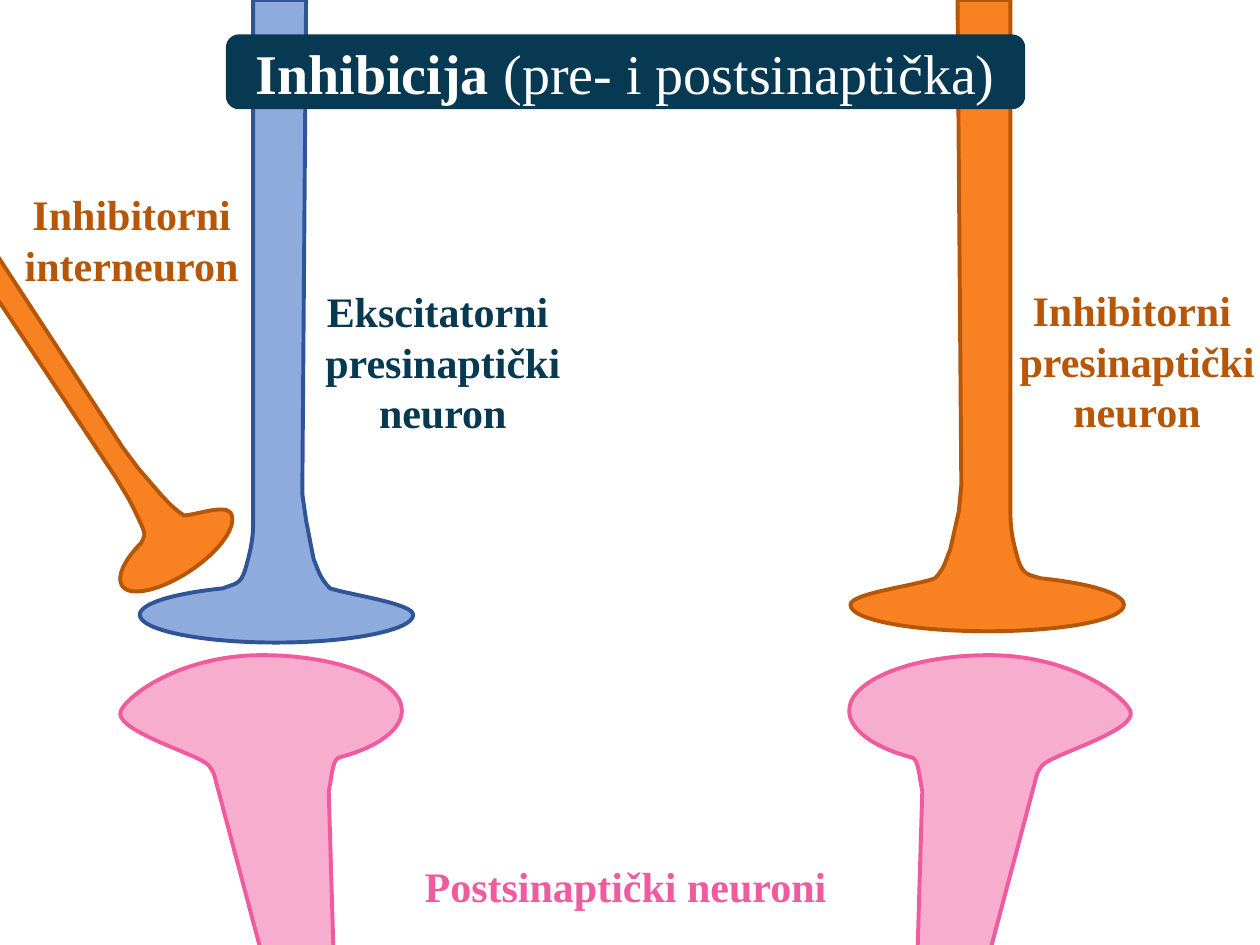
from lxml import etree
from pptx import Presentation
from pptx.dml.color import RGBColor
from pptx.enum.shapes import MSO_SHAPE
from pptx.enum.text import MSO_ANCHOR, MSO_AUTO_SIZE, PP_ALIGN
from pptx.oxml.ns import qn
from pptx.util import Inches, Pt

FONT = "Times New Roman"
COLORS = {
    "navy": "073952", "white": "FFFFFF",
    "pink": "F7ADCE", "pink_line": "EF5B9E",
    "orange": "F88222", "orange_line": "B65606",
    "blue": "8FAADC", "blue_line": "2F5597",
}

TITLE = [("Inhibicija ", True), ("(pre- i postsinaptička)", False)]
TITLE_BOX = (1.8, 0.28, 6.33, 0.58)

LABELS = [
    (["Inhibitorni ", "presinaptički", "neuron"], (7.91, 2.21, 2.23, 1.31), "orange_line"),
    (["Postsinaptički neuroni"], (3.11, 6.78, 3.71, 0.5), "pink_line"),
    (["Ekscitatorni ", "presinaptički", "neuron"], (2.4, 2.22, 2.23, 1.31), "navy"),
    (["Inhibitorni interneuron"], (-0.07, 1.45, 2.23, 0.91), "orange_line"),
]

POSTSYNAPTIC = [
    (7.85, 5.2), (8.47, 5.2, 8.9, 5.5, 8.97, 5.64), (9.04, 5.79, 8.41, 5.97, 8.29, 6.06),
    (8.22, 6.12, 8.22, 6.2, 8.2, 6.26), (7.81, 7.73), (7.28, 7.64), (7.32, 6.28),
    (7.29, 6.13, 7.29, 6.02, 7.23, 6.01), (6.93, 5.93, 6.74, 5.79, 6.74, 5.64),
    (6.74, 5.4, 7.24, 5.2, 7.85, 5.2),
]
INHIBITORY = [
    (7.6, 0), (8.02, 0), (8.02, 4.02), (8.02, 4.16, 8.02, 4.23, 8.08, 4.44),
    (8.12, 4.57, 8.17, 4.56, 8.26, 4.59), (8.65, 4.63, 8.92, 4.71, 8.92, 4.8),
    (8.92, 4.92, 8.44, 5.01, 7.84, 5.01), (7.24, 5.01, 6.75, 4.92, 6.75, 4.8),
    (6.75, 4.71, 7.26, 4.65, 7.42, 4.59), (7.51, 4.5, 7.51, 4.42, 7.54, 4.37),
    (7.61, 4.06), (7.63, 3.85), (7.6, 0),
]
EXCITATORY = [
    (2.43, 0), (2.01, 0), (2.01, 4.08), (2.01, 4.23, 2.01, 4.3, 1.95, 4.51),
    (1.91, 4.65, 1.86, 4.63, 1.77, 4.67), (1.38, 4.71, 1.11, 4.79, 1.11, 4.88),
    (1.11, 5, 1.59, 5.1, 2.19, 5.1), (2.79, 5.1, 3.28, 5, 3.28, 4.88),
    (3.28, 4.79, 2.77, 4.72, 2.62, 4.67), (2.53, 4.58, 2.52, 4.5, 2.49, 4.44),
    (2.43, 4.13), (2.4, 3.92), (2.43, 0),
]
INTERNEURON = [
    (-1.02, 0.5), (-1.19, 0.61), (0.92, 3.79), (0.99, 3.91, 1.03, 3.96, 1.11, 4.14),
    (1.17, 4.26, 1.14, 4.26, 1.12, 4.31), (0.99, 4.44, 0.92, 4.58, 0.97, 4.65),
    (1.03, 4.74, 1.27, 4.69, 1.51, 4.53), (1.75, 4.37, 1.89, 4.17, 1.83, 4.07),
    (1.78, 4, 1.55, 4.09, 1.46, 4.09), (1.38, 4.04, 1.33, 3.98, 1.29, 3.94),
    (1.1, 3.72), (0.98, 3.56), (-1.02, 0.5),
]
MIRROR_SUM = 9.93


def rgb(name):
    return RGBColor.from_string(COLORS[name])


def mirror(outline):
    return [tuple(MIRROR_SUM - v if i % 2 == 0 else v for i, v in enumerate(seg))
            for seg in outline]


def paint(sp, fill, line, width):
    sp.shadow.inherit = False
    sp.fill.solid()
    sp.fill.fore_color.rgb = rgb(fill)
    sp.line.color.rgb = rgb(line)
    sp.line.width = Pt(width)


def style(r, size, color, bold):
    r.font.name, r.font.size, r.font.bold = FONT, Pt(size), bold
    r.font.color.rgb = rgb(color)


def curve(sp, outline):
    lines = list(sp._element.spPr.iter(qn("a:lnTo")))
    for line, seg in zip(lines, outline[1:]):
        if len(seg) == 2:
            continue
        line.tag_name = None
        bezier = etree.Element(qn("a:cubicBezTo"))
        for x, y in zip(seg[::2], seg[1::2]):
            etree.SubElement(bezier, qn("a:pt"), x=str(Inches(x) - sp.left),
                             y=str(Inches(y) - sp.top))
        line.getparent().replace(line, bezier)


def add_neuron(s, outline, color):
    start, *nodes = [tuple(map(Inches, seg[-2:])) for seg in outline]
    builder = s.shapes.build_freeform(*start)
    builder.add_line_segments(nodes, close=True)
    sp = builder.convert_to_shape()
    curve(sp, outline)
    paint(sp, color, color + "_line", 2.25)


def add_label(s, lines, box, color):
    tf = s.shapes.add_textbox(*map(Inches, box)).text_frame
    tf.word_wrap = True
    tf.auto_size = MSO_AUTO_SIZE.SHAPE_TO_FIT_TEXT
    tf.text = "\n".join(lines)
    for p in tf.paragraphs:
        p.alignment = PP_ALIGN.CENTER
        style(p.runs[0], 24, color, True)


def add_title(s):
    box = tuple(map(Inches, TITLE_BOX))
    panel = s.shapes.add_shape(MSO_SHAPE.ROUNDED_RECTANGLE, *box)
    paint(panel, "navy", "navy", 1)
    sp = s.shapes.title
    sp.left, sp.top, sp.width, sp.height = box
    tf = sp.text_frame
    tf.auto_size, tf.word_wrap = MSO_AUTO_SIZE.NONE, True
    tf.vertical_anchor = MSO_ANCHOR.MIDDLE
    p = tf.paragraphs[0]
    p.alignment = PP_ALIGN.CENTER
    for text, bold in TITLE:
        r = p.add_run()
        r.text = text
        style(r, 32, "white", bold)
    s.shapes._spTree.append(sp._element)


def main():
    """Build the slide on presynaptic and postsynaptic inhibition."""
    prs = Presentation()
    prs.slide_width, prs.slide_height = Inches(10), Inches(7.5)
    s = prs.slides.add_slide(prs.slide_layouts[5])
    for outline, color in [
        (POSTSYNAPTIC, "pink"), (INHIBITORY, "orange"), (mirror(POSTSYNAPTIC), "pink"),
        (EXCITATORY, "blue"), (INTERNEURON, "orange"),
    ]:
        add_neuron(s, outline, color)
    for label in LABELS[:2]:
        add_label(s, *label)
    add_title(s)
    for label in LABELS[2:]:
        add_label(s, *label)
    prs.save("out.pptx")


if __name__ == "__main__":
    main()
